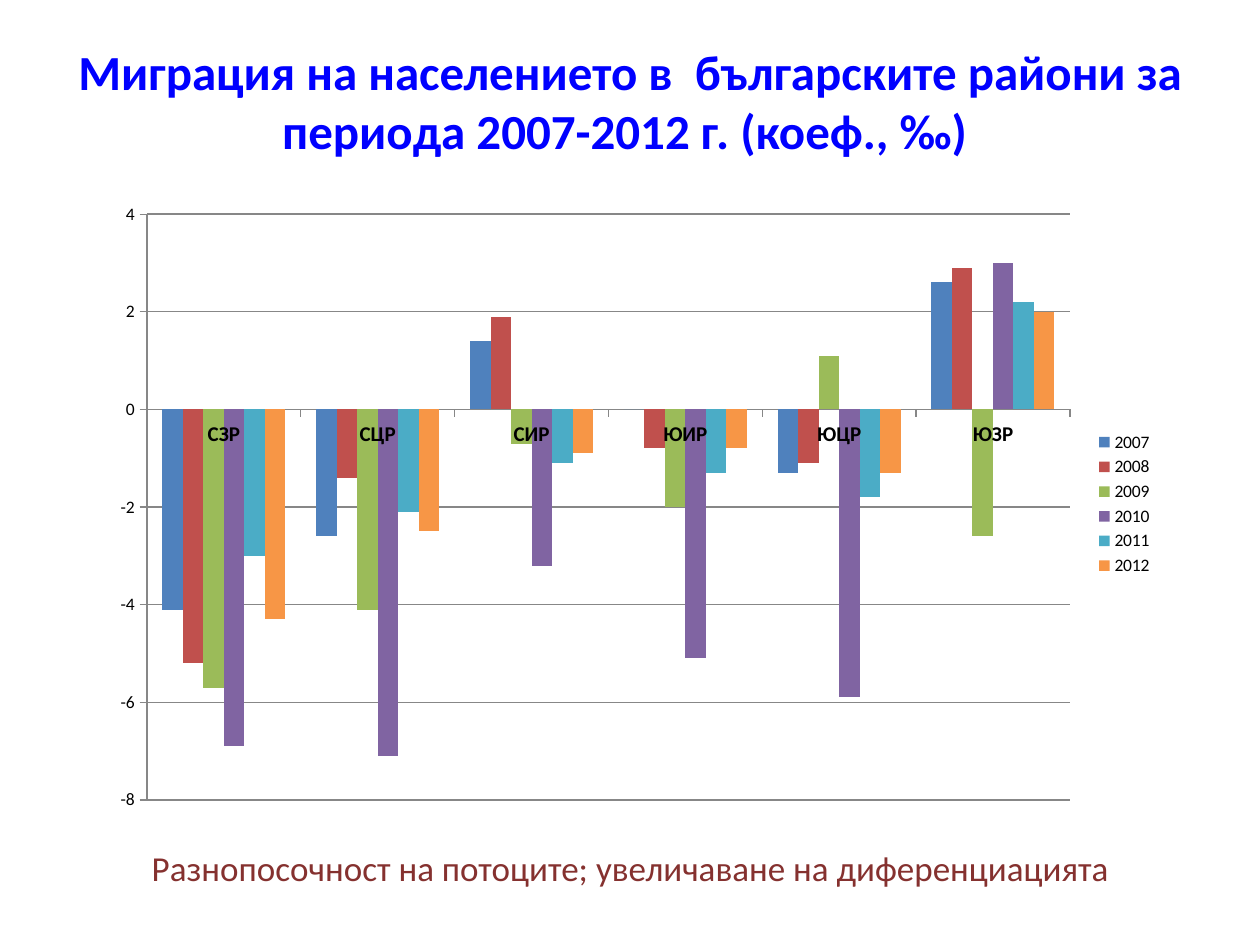
from lxml import etree
from pptx import Presentation
from pptx.chart.data import CategoryChartData
from pptx.dml.color import RGBColor
from pptx.enum.chart import XL_CHART_TYPE as ChartType, XL_LEGEND_POSITION as LegendPosition
from pptx.enum.chart import XL_TICK_MARK as TickMark
from pptx.enum.text import MSO_ANCHOR as Anchor, PP_ALIGN as Align
from pptx.oxml.ns import qn
from pptx.util import Inches, Pt

COLORS = {
    "title": "0000FF", "note": "85312F", "text": "000000", "line": "878787",
    "2007": "4F81BD", "2008": "C0504D", "2009": "9BBB59",
    "2010": "8064A2", "2011": "4BACC6", "2012": "F79646",
}
REGIONS = ["СЗР", "СЦР", "СИР", "ЮИР", "ЮЦР", "ЮЗР"]
MIGRATION = {
    "2007": [-4.1, -2.6, 1.4, 0, -1.3, 2.6],
    "2008": [-5.2, -1.4, 1.9, -0.8, -1.1, 2.9],
    "2009": [-5.7, -4.1, -0.7, -2, 1.1, -2.6],
    "2010": [-6.9, -7.1, -3.2, -5.1, -5.9, 3],
    "2011": [-3, -2.1, -1.1, -1.3, -1.8, 2.2],
    "2012": [-4.3, -2.5, -0.9, -0.8, -1.3, 2],
}
PLOT_AREA = {"x": 0.04, "y": 0.04, "w": 0.87, "h": 0.93}


def apply(target, **values):
    for name, value in values.items():
        setattr(target, name, value)


class SlideBuilder:
    def __init__(self, slide, font_name="Calibri"):
        self.slide = slide
        self.font_name = font_name

    def style_font(self, font, color, size, bold=False):
        apply(font, name=self.font_name, size=Pt(size), bold=bold)
        font.color.rgb = RGBColor.from_string(COLORS[color])

    def text(self, place, words, color, size, bold=False, anchor=Anchor.TOP):
        box = self.slide.shapes.add_textbox(*map(Inches, place))
        apply(box.text_frame, word_wrap=True, vertical_anchor=anchor)
        para = box.text_frame.paragraphs[0]
        para.alignment = Align.CENTER
        span = para.add_run()
        span.text = words
        self.style_font(span.font, color, size, bold)
        return para

    def style_line(self, line):
        line.color.rgb = RGBColor.from_string(COLORS["line"])
        line.width = Pt(0.75)

    def column_chart(self, place, categories, series_values):
        data = CategoryChartData(number_format="General")
        data.categories = categories
        for name, values in series_values.items():
            data.add_series(name, values)
        chart = self.slide.shapes.add_chart(
            ChartType.COLUMN_CLUSTERED, *map(Inches, place), data).chart
        apply(chart, has_title=False, has_legend=True)
        self.style_font(chart.font, "text", 10)
        apply(chart.legend, position=LegendPosition.RIGHT, include_in_layout=False)

        # Columns
        plot = chart.plots[0]
        apply(plot, gap_width=150, overlap=0, vary_by_categories=False)
        for series in plot.series:
            series.invert_if_negative = False
            series.format.fill.solid()
            series.format.fill.fore_color.rgb = RGBColor.from_string(COLORS[series.name])

        # Axes and gridlines
        for axis in (chart.category_axis, chart.value_axis):
            apply(axis, major_tick_mark=TickMark.OUTSIDE, minor_tick_mark=TickMark.NONE)
            self.style_line(axis.format.line)
        self.style_font(chart.category_axis.tick_labels.font, "text", 12, bold=True)
        apply(chart.value_axis, minimum_scale=-8, maximum_scale=4, major_unit=2,
              has_major_gridlines=True)
        self.style_line(chart.value_axis.major_gridlines.format.line)
        self.fix_plot_area(chart)

    def fix_plot_area(self, chart):
        area = chart.element.find(".//" + qn("c:plotArea"))
        for old in area.findall(qn("c:layout")):
            area.remove(old)
        layout = etree.Element(qn("c:layout"))
        area.insert(0, layout)
        manual = etree.SubElement(layout, qn("c:manualLayout"))
        settings = {"layoutTarget": "inner", "xMode": "edge", "yMode": "edge", **PLOT_AREA}
        for tag, value in settings.items():
            etree.SubElement(manual, qn("c:" + tag)).set("val", str(value))


def main():
    deck = Presentation()
    apply(deck, slide_width=Inches(10), slide_height=Inches(7.5))
    page = SlideBuilder(deck.slides.add_slide(deck.slide_layouts[6]))

    # Title
    page.text((0.5, 0.17, 9, 1.25),
              "Миграция на населението в  българските райони за периода 2007-2012 г. (коеф., ‰) ",
              "title", 28, bold=True, anchor=Anchor.MIDDLE)

    # Migration rates by region and year
    page.column_chart((0.83, 1.5, 8.42, 5), REGIONS, MIGRATION)

    # Conclusion
    note = page.text((0.42, 6.67, 9.17, 0.58),
                     "Разнопосочност на потоците; увеличаване на диференциацията", "note", 20)
    note.space_before = Pt(4)

    deck.save("out.pptx")


if __name__ == "__main__":
    main()
